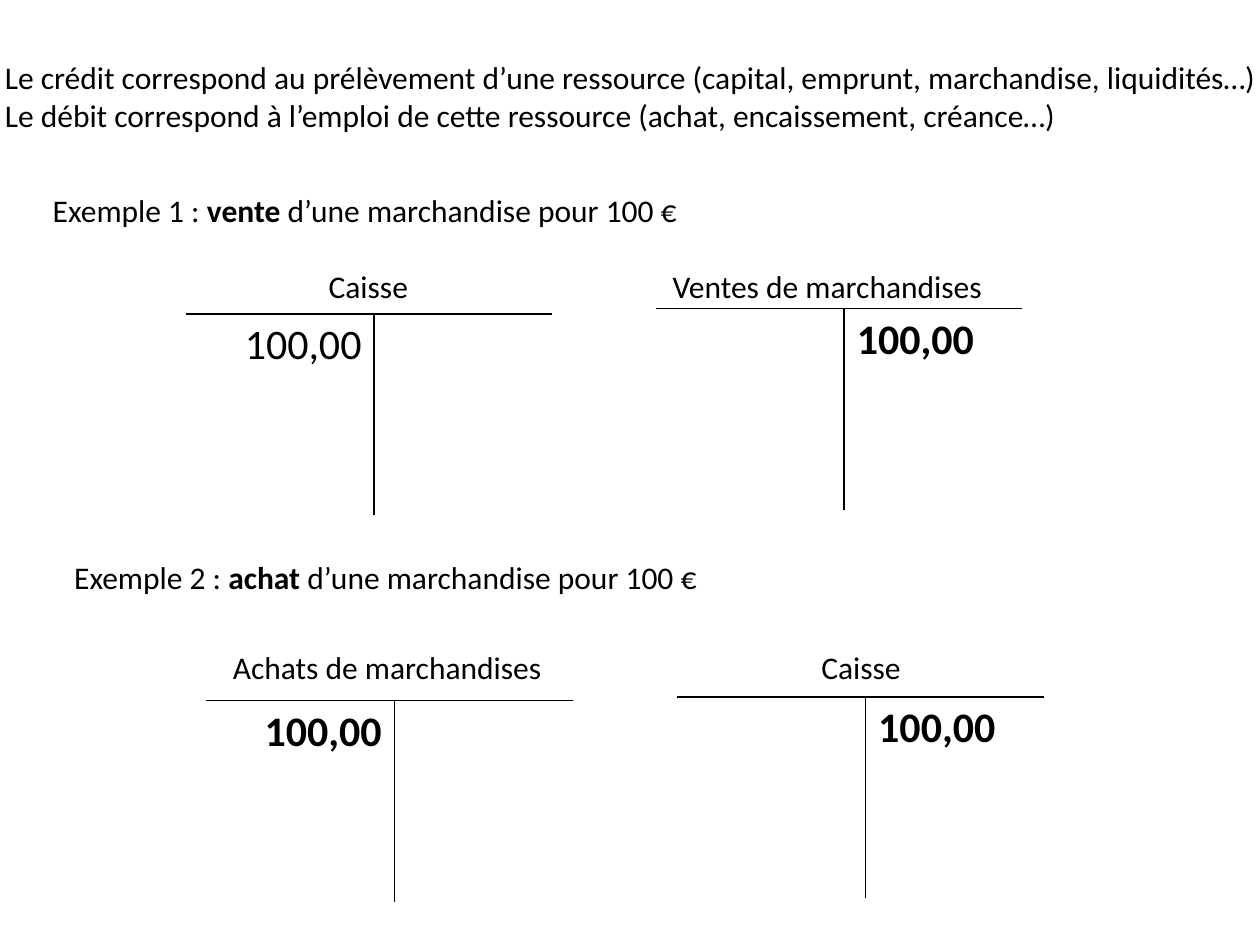
"""Build a slide of T-accounts that explains credit and debit."""
import dataclasses

import lxml.etree
import pptx
import pptx.dml.color
import pptx.enum.text
import pptx.oxml.ns
import pptx.slide
import pptx.table
import pptx.text.text
import pptx.util

Inches = pptx.util.Inches
Align = pptx.enum.text.PP_ALIGN


@dataclasses.dataclass(frozen=True)
class Theme:
    font: str = "Calibri"
    ink: str = "000000"
    paper: str = "FFFFFF"
    body: int = 18
    sum: int = 24
    thin: int = 1
    thick: int = 3


@dataclasses.dataclass(frozen=True)
class Label:
    left: float
    top: float
    width: float
    lines: tuple[str, ...]
    height: float = 0.4


@dataclasses.dataclass(frozen=True)
class Account:
    left: float
    top: float
    debit: str = ""
    credit: str = ""


THEME = Theme()
COLS = (1.5, 1.42)
DEPTH = 1.58

LABELS = (
    Label(-0.06, 0.41, 10.25, (
        "Le crédit correspond au prélèvement d’une ressource (capital, emprunt, marchandise, liquidités…)",
        "Le débit correspond à l’emploi de cette ressource (achat, encaissement, créance…)",
    ), 0.71),
    Label(0.32, 1.47, 5.21, ("Exemple 1 : *vente* d’une marchandise pour 100 €",)),
    Label(0.49, 4.38, 5.19, ("Exemple 2 : *achat* d’une marchandise pour 100 €",)),
    Label(2.51, 2.07, 0.84, ("Caisse",)),
    Label(6.42, 5.09, 0.84, ("Caisse",)),
    Label(5.24, 2.07, 2.69, ("Ventes de marchandises",)),
    Label(1.75, 5.09, 2.78, ("Achats de marchandises",)),
)

ACCOUNTS = (
    Account(1.47, 2.49, debit="100,00"),
    Account(1.63, 5.56, debit="*100,00*"),
    Account(5.2, 2.45, credit="*100,00*"),
    Account(5.37, 5.53, credit="*100,00*"),
)


def write(para: pptx.text.text._Paragraph, text: str, *, size: int,
          align: Align = Align.LEFT) -> None:
    """Fill a paragraph, with the parts between asterisks in bold."""
    para.alignment = align
    for index, part in enumerate(text.split("*")):
        if part:
            run = para.add_run()
            run.text = part
            run.font.name = THEME.font
            run.font.size = pptx.util.Pt(size)
            run.font.bold = index % 2 == 1
            run.font.color.rgb = pptx.dml.color.RGBColor.from_string(THEME.ink)


def add_label(slide: pptx.slide.Slide, label: Label) -> None:
    """Add an unwrapped text box with one paragraph per line."""
    box = slide.shapes.add_textbox(Inches(label.left), Inches(label.top),
                                   Inches(label.width), Inches(label.height))
    frame = box.text_frame
    frame.word_wrap = False
    frame.auto_size = pptx.enum.text.MSO_AUTO_SIZE.SHAPE_TO_FIT_TEXT
    for index, line in enumerate(label.lines):
        para = frame.add_paragraph() if index else frame.paragraphs[0]
        write(para, line, size=THEME.body)


def rule_cell(cell: pptx.table._Cell, left: str, right: str) -> None:
    """Clear the fill and draw the four borders of a cell."""
    cell.fill.background()
    props = cell._tc.get_or_add_tcPr()
    qn = pptx.oxml.ns.qn
    edges = (("L", left, THEME.thin), ("R", right, THEME.thin),
             ("T", THEME.ink, THEME.thin), ("B", THEME.paper, THEME.thick))
    for index, (side, color, width) in enumerate(edges):
        line = lxml.etree.Element(qn(f"a:ln{side}"), w=str(pptx.util.Pt(width)))
        fill = lxml.etree.SubElement(line, qn("a:solidFill"))
        lxml.etree.SubElement(fill, qn("a:srgbClr"), val=color)
        props.insert(index, line)


def add_account(slide: pptx.slide.Slide, account: Account) -> None:
    """Add a T-account with debit on the left and credit on the right."""
    table = slide.shapes.add_table(1, 2, Inches(account.left), Inches(account.top),
                                   Inches(sum(COLS)), Inches(DEPTH)).table
    table.first_row = table.horz_banding = False
    sides = ((account.debit, Align.RIGHT, THEME.paper, THEME.ink),
             (account.credit, Align.LEFT, THEME.ink, THEME.paper))
    for index, (text, align, left, right) in enumerate(sides):
        table.columns[index].width = Inches(COLS[index])
        cell = table.cell(0, index)
        rule_cell(cell, left, right)
        write(cell.text_frame.paragraphs[0], text, size=THEME.sum, align=align)


def main() -> None:
    """Build and save the slide."""
    deck = pptx.Presentation()
    deck.slide_width, deck.slide_height = Inches(10), Inches(7.5)
    slide = deck.slides.add_slide(deck.slide_layouts[6])
    for account in ACCOUNTS:
        add_account(slide, account)
    for label in LABELS:
        add_label(slide, label)
    deck.save("out.pptx")


if __name__ == "__main__":
    main()
